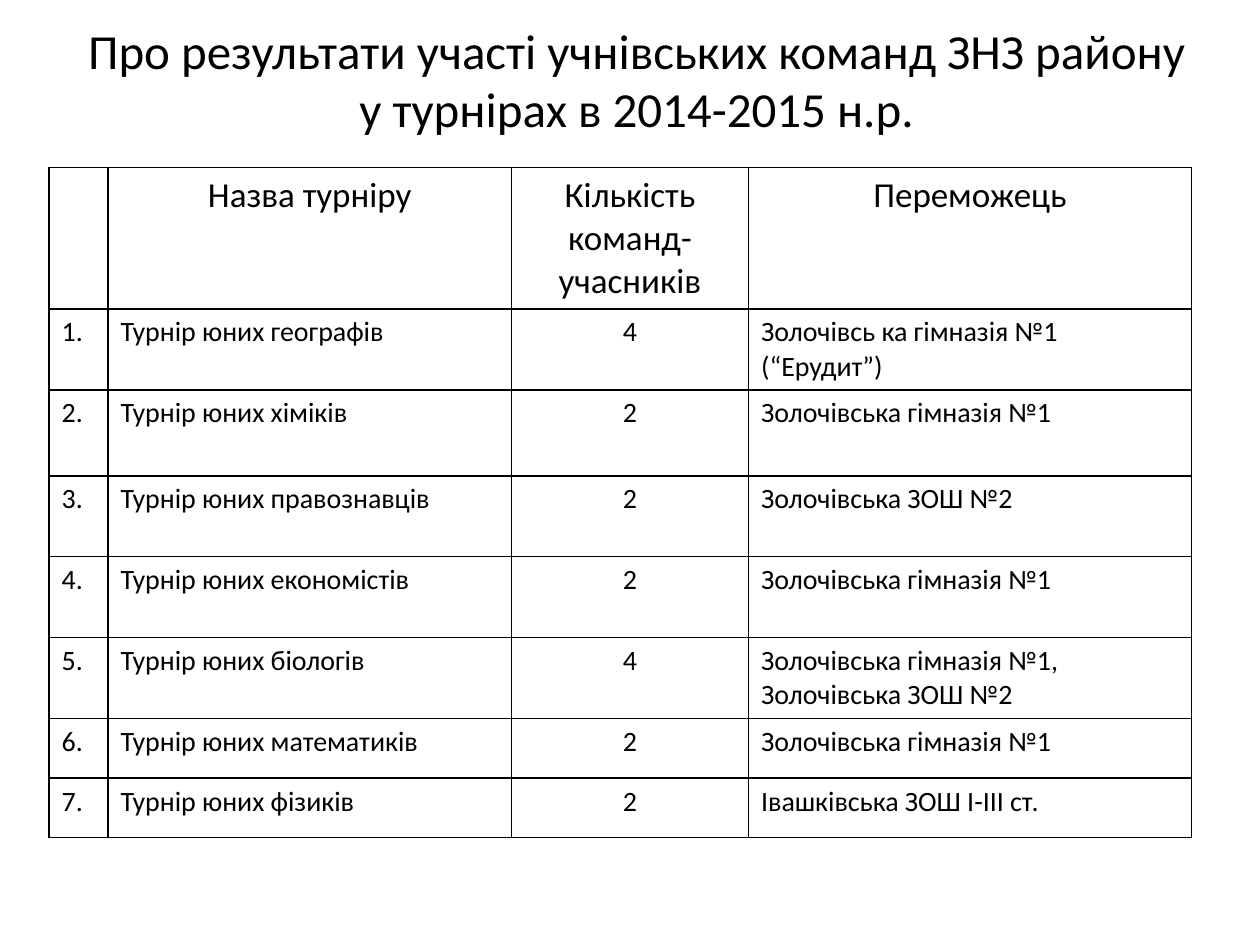
from dataclasses import dataclass

from lxml.etree import SubElement
from pptx import Presentation
from pptx.dml.color import RGBColor
from pptx.enum.text import MSO_ANCHOR as Anchor, MSO_AUTO_SIZE as AutoSize, PP_ALIGN as Align
from pptx.oxml.ns import qn
from pptx.util import Cm, Pt


@dataclass(frozen=True)
class Theme:
    font: str = "Calibri"
    ink: str = "000000"
    title_size: int = 28
    header_size: int = 20
    body_size: int = 16
    border_width: int = 1


THEME = Theme()
TITLE = "Про результати участі учнівських команд ЗНЗ району у турнірах в 2014-2015 н.р."
HEADERS = ["", "Назва турніру", "Кількість команд-учасників", "Переможець"]
TOURNAMENTS = [
    ("географів", 4, "Золочівсь ка гімназія №1 (“Ерудит”)"),
    ("хіміків", 2, "Золочівська гімназія №1"),
    ("правознавців", 2, "Золочівська ЗОШ №2"),
    ("економістів", 2, "Золочівська гімназія №1"),
    ("біологів", 4, "Золочівська гімназія №1, Золочівська ЗОШ №2"),
    ("математиків", 2, "Золочівська гімназія №1"),
    ("фізиків", 2, "Івашківська ЗОШ І-ІІІ ст."),
]
COLUMN_WIDTHS = [1.19, 8.13, 4.78, 8.93]
ROW_HEIGHTS = [2.21, 1.63, 1.73, 1.63, 1.63, 1.63, 1.2, 1.2]
COLUMN_ALIGNS = [Align.LEFT, Align.LEFT, Align.CENTER, Align.LEFT]


def set_attributes(target, values):
    for name, value in values.items():
        setattr(target, name, value)


def write_text(text_frame, text, size, align):
    paragraph = text_frame.paragraphs[0]
    paragraph.alignment = align
    run = paragraph.add_run()
    run.text = text
    set_attributes(run.font, {"name": THEME.font, "size": Pt(size), "bold": False})
    run.font.color.rgb = RGBColor.from_string(THEME.ink)


def add_title(slide):
    title = slide.shapes.title
    set_attributes(title, {"left": Cm(1.4), "top": Cm(0), "width": Cm(22.86), "height": Cm(3.18)})
    set_attributes(title.text_frame, {
        "word_wrap": True, "auto_size": AutoSize.NONE, "vertical_anchor": Anchor.MIDDLE,
    })
    write_text(title.text_frame, TITLE, THEME.title_size, Align.CENTER)


def add_borders(cell):
    properties = cell._tc.get_or_add_tcPr()
    for side in ("a:lnL", "a:lnR", "a:lnT", "a:lnB"):
        line = SubElement(properties, qn(side), w=str(Pt(THEME.border_width)))
        fill = SubElement(line, qn("a:solidFill"))
        SubElement(fill, qn("a:srgbClr"), val=THEME.ink)


def add_results_table(slide):
    rows = [HEADERS] + [
        [f"{number}.", f"Турнір юних {subject}", str(teams), winner]
        for number, (subject, teams, winner) in enumerate(TOURNAMENTS, 1)
    ]
    table = slide.shapes.add_table(
        len(rows), len(HEADERS), Cm(0.99), Cm(3.38),
        Cm(sum(COLUMN_WIDTHS)), Cm(sum(ROW_HEIGHTS)),
    ).table
    set_attributes(table, {"first_row": False, "horz_banding": False})
    for column, width in zip(table.columns, COLUMN_WIDTHS):
        column.width = Cm(width)
    for row, height in zip(table.rows, ROW_HEIGHTS):
        row.height = Cm(height)
    for row_index, texts in enumerate(rows):
        is_header = row_index == 0
        size = THEME.header_size if is_header else THEME.body_size
        for column_index, text in enumerate(texts):
            cell = table.cell(row_index, column_index)
            add_borders(cell)
            cell.fill.background()
            if text:
                align = Align.CENTER if is_header else COLUMN_ALIGNS[column_index]
                write_text(cell.text_frame, text, size, align)


def main():
    presentation = Presentation()
    set_attributes(presentation, {"slide_width": Cm(25.4), "slide_height": Cm(19.05)})
    slide = presentation.slides.add_slide(presentation.slide_layouts.get_by_name("Title Only"))
    add_title(slide)
    add_results_table(slide)
    presentation.save("out.pptx")


if __name__ == "__main__":
    main()
